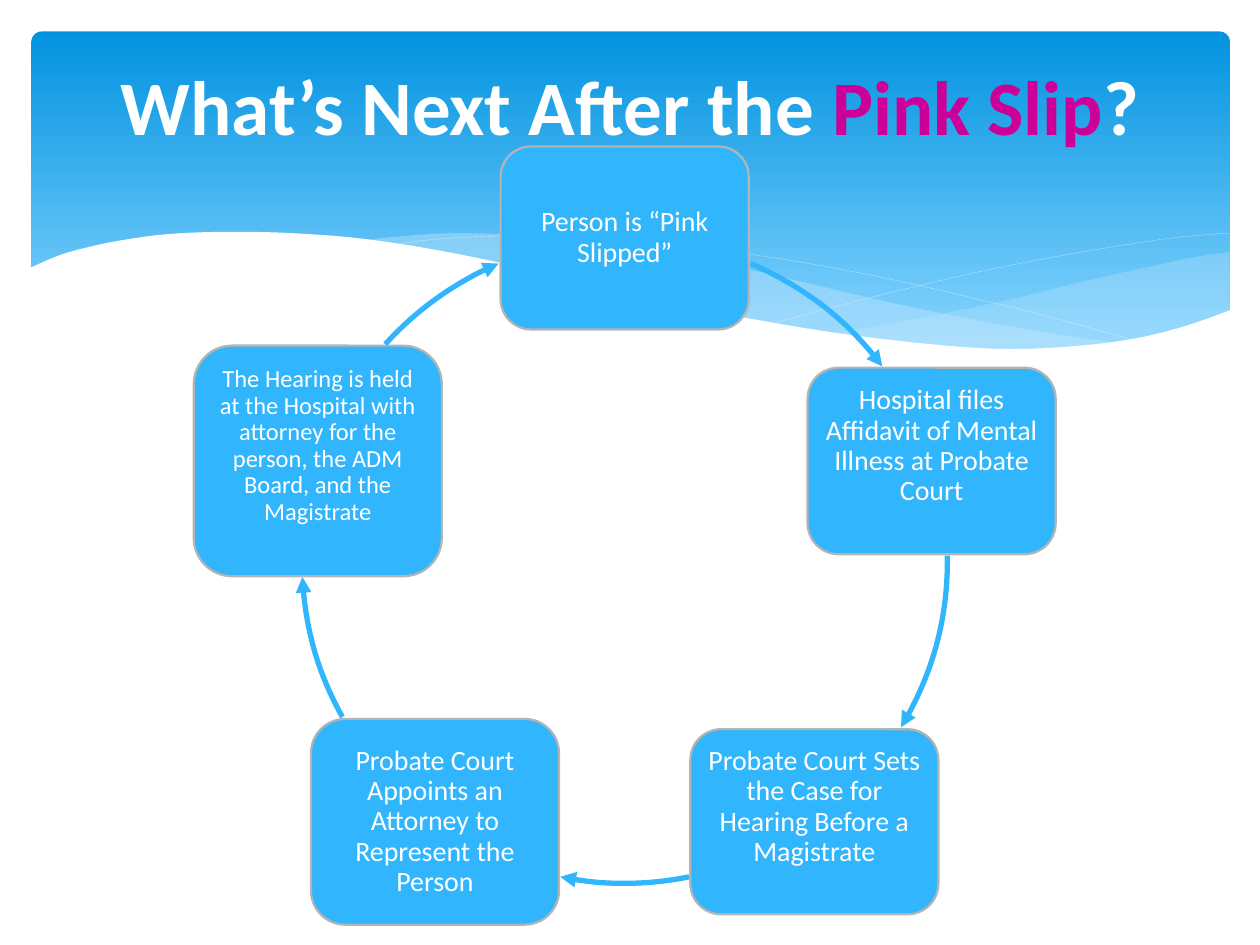
import math

import pptx
import pptx.dml.color
import pptx.enum.shapes
import pptx.enum.text
import pptx.oxml
import pptx.oxml.ns
import pptx.util

Pt = pptx.util.Pt
RGB = pptx.dml.color.RGBColor.from_string
qn = pptx.oxml.ns.qn
SHAPE = pptx.enum.shapes.MSO_SHAPE

THEME = {
    "font": "Calibri",
    "white": "FFFFFF", "pink": "CC0099", "step": "31B6FD", "border": "B4B4B4",
    "sky_top": "0293E0", "sky_bottom": "83D3FE", "wave": "C6E7FC",
    "title_size": 44, "border_width": 1.25, "arrow_width": 3, "hairline": 0.05,
}

TITLE = [("What’s Next After the ", "white"), ("Pink Slip", "pink"), ("?", "white")]

# text, box height, type size, inset, extra space below the text
STEPS = [
    ("Person is “Pink Slipped”", 104.6, 16, 10.3, 0),
    ("Hospital files Affidavit of Mental Illness at Probate Court", 106.6, 16, 10.3, 17),
    ("Probate Court Sets the Case for Hearing Before a Magistrate", 105.8, 16, 10.3, 17),
    ("Probate Court Appoints an Attorney to Represent the Person", 117.6, 16, 10.8, 0),
    ("The Hearing is held at the Hospital with attorney for the person, "
     "the ADM Board, and the Magistrate", 131.8, 14, 10.8, 17),
]
STEP_WIDTH = 141.8
STEP_CORNER = 1 / 6
CENTRE_X, CENTRE_Y, RADIUS = 357, 320.4, 184.4
# start and end of each arrow, in degrees clockwise from the top of the cycle
ARROWS = [(23, 53), (89.1, 121.1), (168.5, 191.5), (241, 267.1), (312.1, 337)]

# Each wave is a list of edges; each edge is a list of points on a smooth curve.
WAVES = [
    {"fill": "wave", "opacity": 29, "edges": [
        [(702.7, 144), (682.6, 146.9), (652.3, 153.4), (619.9, 160.6), (579.6, 170.6),
         (542.2, 178.6), (508.3, 185), (475.9, 190.8)],
        [(475.9, 190.8), (507.6, 195.1), (545, 198.7), (578.2, 200.2), (607.7, 199.4),
         (634.3, 196.6), (657.4, 192.2), (678.2, 186.5), (702.7, 177.8)]]},
    {"fill": "wave", "opacity": 40, "edges": [
        [(643, 196.6), (602.6, 190.8), (558, 182.9), (508.3, 172.8), (452.9, 159.8),
         (409.7, 149.8), (370.1, 142.6), (334.8, 137.5), (302.4, 134.6),
         (259.9, 133.2), (225.4, 135.4), (205.9, 137.5)],
        [(205.9, 137.5), (246.2, 143.3), (290.9, 151.9), (323.3, 159.8), (381.6, 172.8),
         (432.7, 183.6), (478.8, 191.5), (519.8, 197.3), (556.6, 199.4),
         (589, 200.2), (617, 199.4), (643, 196.6)]]},
    {"line": "white", "edges": [
        [(222.5, 140.4), (241.2, 137.5), (269.3, 135.4), (311.8, 134.6), (352.1, 136.8),
         (400.3, 141.8), (457.9, 149.8), (523.4, 162.7), (598.3, 180.7), (653, 195.8)]]},
    {"line": "white", "edges": [
        [(441.4, 185), (470.2, 177.1), (518.4, 164.9), (558.7, 155.5), (601.9, 146.9),
         (644.4, 139.7), (675.4, 135.4), (702, 133.2)]]},
    {"fill": "white", "edges": [
        [(703.4, 177.1), (676.8, 186.5), (647.3, 193.7), (612, 198), (571, 199.4),
         (522.7, 195.8), (466.6, 188.6), (399.6, 176.4), (321.8, 158.4),
         (262.8, 145.4), (210.2, 136.8), (165.6, 133.2), (127.4, 132.5),
         (95, 133.9), (68.4, 137.5), (48.2, 141.8), (33.1, 146.2), (16.6, 153.4)],
        [(16.6, 236.9), (703.4, 236.9)]]},
]


def smooth(points, steps=5):
    """Return points on the Catmull-Rom curve through the given ones."""
    ends = [points[0], *points, points[-1]]
    curve = [points[0]]
    for a, b, c, d in zip(ends, ends[1:], ends[2:], ends[3:]):
        for i in range(1, steps + 1):
            t = i / steps
            curve.append(tuple(
                (2 * q + (r - p) * t + (2 * p - 5 * q + 4 * r - u) * t ** 2
                 + (3 * q - p - 3 * r + u) * t ** 3) / 2
                for p, q, r, u in zip(a, b, c, d)))
    return curve


def style(sp, fill=None, line=None, width=0):
    """Set plain fill and line by theme colour name; None means none."""
    sp.shadow.inherit = False
    if fill:
        sp.fill.solid()
        sp.fill.fore_color.rgb = RGB(THEME[fill])
    else:
        sp.fill.background()
    if line:
        sp.line.color.rgb = RGB(THEME[line])
        sp.line.width = Pt(width)
    else:
        sp.line.fill.background()


def add_detail(sp, parent, tag, **attributes):
    """Append a drawing element to the first parent of that tag in the shape."""
    values = " ".join(f'{name}="{value}"' for name, value in attributes.items())
    sp.element.spPr.find(".//" + qn(parent)).append(
        pptx.oxml.parse_xml(f'<{tag} {pptx.oxml.ns.nsdecls("a")} {values}/>'))


def add_preset(s, kind, left, top, width, height, adjustments):
    sp = s.shapes.add_shape(kind, Pt(left), Pt(top), Pt(width), Pt(height))
    for i, value in enumerate(adjustments):
        sp.adjustments[i] = value
    return sp


def format_text(tf, **formats):
    """Format the frame and return its first paragraph, centred."""
    formats |= {"word_wrap": True,
                "vertical_anchor": pptx.enum.text.MSO_ANCHOR.MIDDLE}
    for name, value in formats.items():
        setattr(tf, name, value)
    p = tf.paragraphs[0]
    p.alignment = pptx.enum.text.PP_ALIGN.CENTER
    return p


def add_run(p, text, size, color, bold=False):
    r = p.add_run()
    r.text = text
    formats = {"name": THEME["font"], "size": Pt(size), "bold": bold}
    for name, value in formats.items():
        setattr(r.font, name, value)
    r.font.color.rgb = RGB(THEME[color])


def add_backdrop(s):
    sky = add_preset(s, SHAPE.ROUNDED_RECTANGLE, 18, 18, 684.7, 194.4, [0.03])
    style(sky)
    sky.fill.gradient()
    sky.fill.gradient_angle = 270
    stops = (("sky_top", 0), ("sky_bottom", 0.9))
    for stop, (color, position) in zip(sky.fill.gradient_stops, stops):
        stop.color.rgb = RGB(THEME[color])
        stop.position = position
    for wave in WAVES:
        start, *rest = [(Pt(x), Pt(y)) for edge in wave["edges"] for x, y in smooth(edge)]
        builder = s.shapes.build_freeform(*start, scale=1.0)
        builder.add_line_segments(rest, close="fill" in wave)
        sp = builder.convert_to_shape()
        style(sp, wave.get("fill"), wave.get("line"), THEME["hairline"])
        if "opacity" in wave:
            add_detail(sp, "a:srgbClr", "a:alpha", val=wave["opacity"] * 1000)


def add_step(s, index, text, height, size, inset, space_below):
    angle = 2 * math.pi * index / len(STEPS)
    left = CENTRE_X + RADIUS * math.sin(angle) - STEP_WIDTH / 2
    top = CENTRE_Y - RADIUS * math.cos(angle) - height / 2
    sp = add_preset(s, SHAPE.ROUNDED_RECTANGLE, left, top, STEP_WIDTH, height, [STEP_CORNER])
    style(sp, "step", "border", THEME["border_width"])
    # the round corners already push the text area inwards
    margin = inset - (1 - math.sqrt(0.5)) * STEP_CORNER * height
    p = format_text(sp.text_frame, margin_left=Pt(margin), margin_right=Pt(margin),
                    margin_top=Pt(margin), margin_bottom=Pt(margin + space_below))
    p.line_spacing = 0.9
    add_run(p, text, size, "white")


def add_arrow(s, start, end):
    # arc angles run clockwise from the right, in units of 0.6 per degree
    angles = [(a - 90) % 360 * 0.6 for a in (start, end)]
    sp = add_preset(s, SHAPE.ARC, CENTRE_X - RADIUS, CENTRE_Y - RADIUS,
                    2 * RADIUS, 2 * RADIUS, angles)
    style(sp, line="step", width=THEME["arrow_width"])
    add_detail(sp, "a:ln", "a:tailEnd", type="triangle")


def set_title(s):
    title = s.shapes.title
    box = {"left": 36, "top": 18, "width": 648, "height": 84}
    for name, value in box.items():
        setattr(title, name, Pt(value))
    p = format_text(title.text_frame)
    for text, color in TITLE:
        add_run(p, text, THEME["title_size"], color, bold=True)
    title.element.getparent().append(title.element)  # in front of the backdrop


def main():
    prs = pptx.Presentation()
    prs.slide_width, prs.slide_height = Pt(720), Pt(540)
    s = prs.slides.add_slide(prs.slide_layouts[5])
    add_backdrop(s)
    for index, (step, arrow) in enumerate(zip(STEPS, ARROWS)):
        add_step(s, index, *step)
        add_arrow(s, *arrow)
    set_title(s)
    prs.save("out.pptx")


if __name__ == "__main__":
    main()
